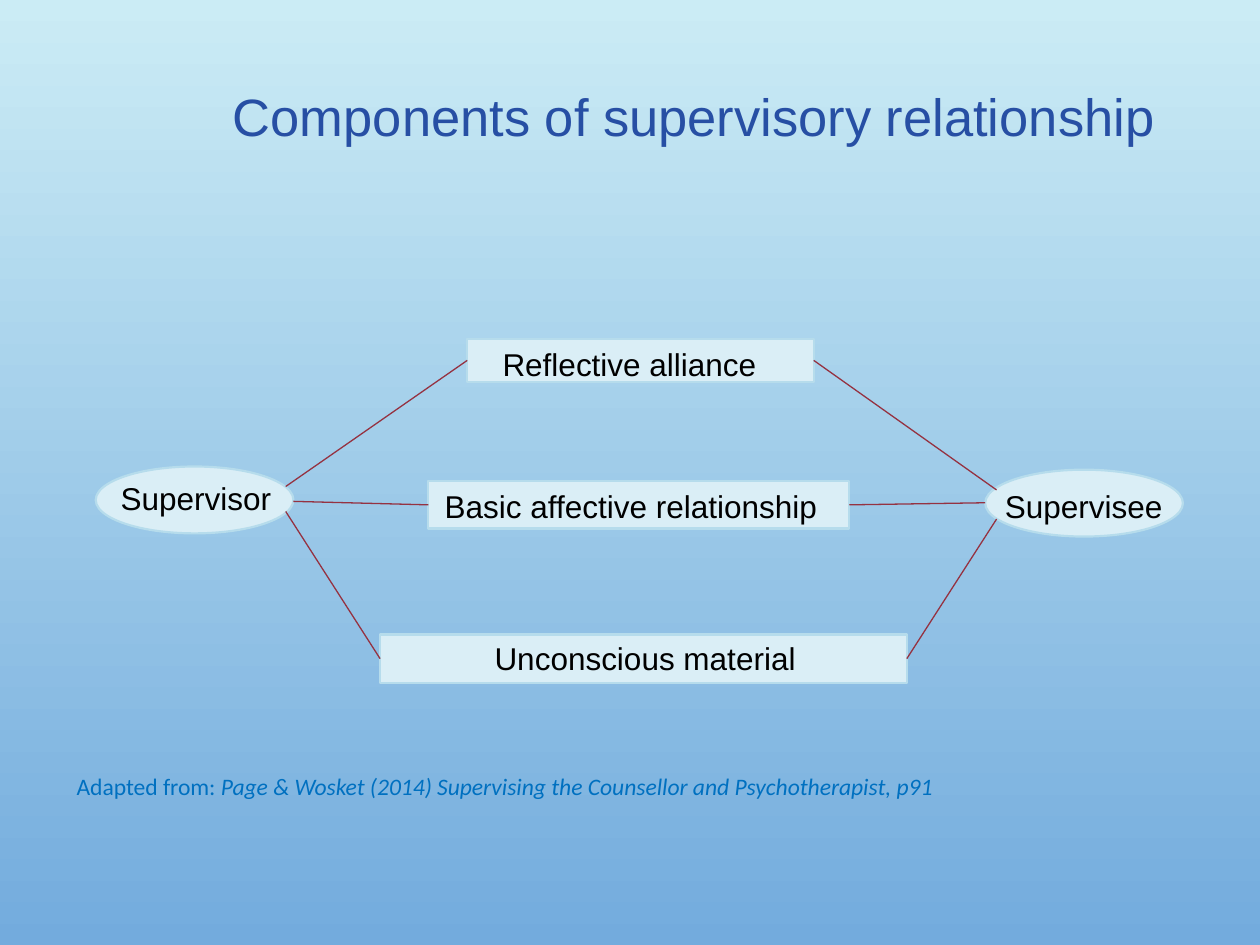
from dataclasses import dataclass

from lxml import etree
from pptx import Presentation
from pptx import util as u
from pptx.dml.color import RGBColor
from pptx.enum import shapes, text
from pptx.oxml import ns


@dataclass(frozen=True)
class Theme:
    sky_top: str = "CBECF5"
    sky_bottom: str = "73ABDD"
    title: str = "274FA4"
    label: str = "000000"
    source: str = "0070C0"
    node_fill: str = "DAEEF6"
    node_line: str = "B6DCEC"
    link: str = "953241"
    font: str = "Arial"
    source_font: str = "Calibri"
    title_size: float = 30
    label_size: float = 18
    source_size: float = 13.5
    node_width: float = 1.25
    link_width: float = 0.75


@dataclass(frozen=True)
class Box:
    left: float
    top: float
    width: float
    height: float

    def lengths(self):
        return [u.Pt(value) for value in (self.left, self.top, self.width, self.height)]


@dataclass(frozen=True)
class Node:
    label: str
    box: Box
    label_box: Box
    align: text.PP_ALIGN = text.PP_ALIGN.CENTER


@dataclass(frozen=True)
class Person:
    node: Node
    side: int
    link_starts: tuple[tuple[float, float], ...]


THEME = Theme()
TITLE_BOX = Box(126, 44.6, 573.8, 43.9)
SOURCE_BOX = Box(36.7, 437.8, 527.8, 40.3)
LEFT_SIDE, RIGHT_SIDE = 1, 3

COMPONENTS = (
    Node("Reflective alliance", Box(267, 193.7, 198, 24.5), Box(275.8, 193.7, 167.8, 28.8)),
    Node("Basic affective relationship", Box(244.8, 275, 240.5, 27), Box(247, 275, 229.7, 28.8),
         text.PP_ALIGN.LEFT),
    Node("Unconscious material", Box(217.2, 362.6, 301, 27.6), Box(223.2, 361.4, 290.9, 28.8)),
)
PEOPLE = (
    Person(Node("Supervisor", Box(54.7, 266.6, 113, 38.2), Box(61, 270, 102, 28.8)),
           LEFT_SIDE, ((163.3, 278), (167.7, 286.5), (163.3, 292.3))),
    Person(Node("Supervisee", Box(563, 268.4, 113, 38.2), Box(563.8, 274.6, 110.9, 28.8)),
           RIGHT_SIDE, ((569.5, 280), (563, 287.3), (569.5, 296.6))),
)


def color(value: str) -> RGBColor:
    return RGBColor.from_string(value)


def add_text(slide, box: Box, content: str, *, size: float, fill: str, font: str = THEME.font,
             align: text.PP_ALIGN = text.PP_ALIGN.LEFT, italic_tail: str = ""):
    shape = slide.shapes.add_textbox(*box.lengths())
    shape.text_frame.word_wrap = True
    paragraph = shape.text_frame.paragraphs[0]
    paragraph.alignment = align
    for words, italic in ((content, False), (italic_tail, True)):
        if words:
            run = paragraph.add_run()
            run.text = words
            run.font.name = font
            run.font.size = u.Pt(size)
            run.font.italic = italic
            run.font.color.rgb = color(fill)
    return shape


def add_node(slide, node: Node, preset: shapes.MSO_SHAPE):
    shape = slide.shapes.add_shape(preset, *node.box.lengths())
    shape.shadow.inherit = False
    shape.fill.solid()
    shape.fill.fore_color.rgb = color(THEME.node_fill)
    shape.line.color.rgb = color(THEME.node_line)
    shape.line.width = u.Pt(THEME.node_width)
    add_text(slide, node.label_box, node.label, size=THEME.label_size,
             fill=THEME.label, align=node.align)
    return shape


def add_link(slide, start: tuple[float, float], target, side: int) -> None:
    x, y = (u.Pt(value) for value in start)
    connector = slide.shapes.add_connector(shapes.MSO_CONNECTOR.STRAIGHT, x, y, x, y)
    connector.end_connect(target, side)
    connector.line.color.rgb = color(THEME.link)
    connector.line.width = u.Pt(THEME.link_width)
    etree.SubElement(connector._element.spPr, ns.qn("a:effectLst"))


def paint_background(slide) -> None:
    fill = slide.background.fill
    fill.gradient()
    fill.gradient_angle = 270
    for stop, value in zip(fill.gradient_stops, (THEME.sky_top, THEME.sky_bottom)):
        stop.color.rgb = color(value)


def main() -> None:
    presentation = Presentation()
    presentation.slide_width, presentation.slide_height = u.Pt(720), u.Pt(540)
    slide = presentation.slides.add_slide(presentation.slide_layouts[6])
    paint_background(slide)
    add_text(slide, TITLE_BOX, "Components of supervisory relationship",
             size=THEME.title_size, fill=THEME.title)

    for person in PEOPLE:
        add_node(slide, person.node, shapes.MSO_SHAPE.OVAL)
    rectangles = [add_node(slide, node, shapes.MSO_SHAPE.RECTANGLE) for node in COMPONENTS]
    for person in PEOPLE:
        for start, rectangle in zip(person.link_starts, rectangles):
            add_link(slide, start, rectangle, person.side)

    add_text(slide, SOURCE_BOX, "Adapted from: ", size=THEME.source_size, fill=THEME.source,
             font=THEME.source_font,
             italic_tail="Page & Wosket (2014) Supervising the Counsellor and Psychotherapist, p91")
    presentation.save("out.pptx")


if __name__ == "__main__":
    main()
